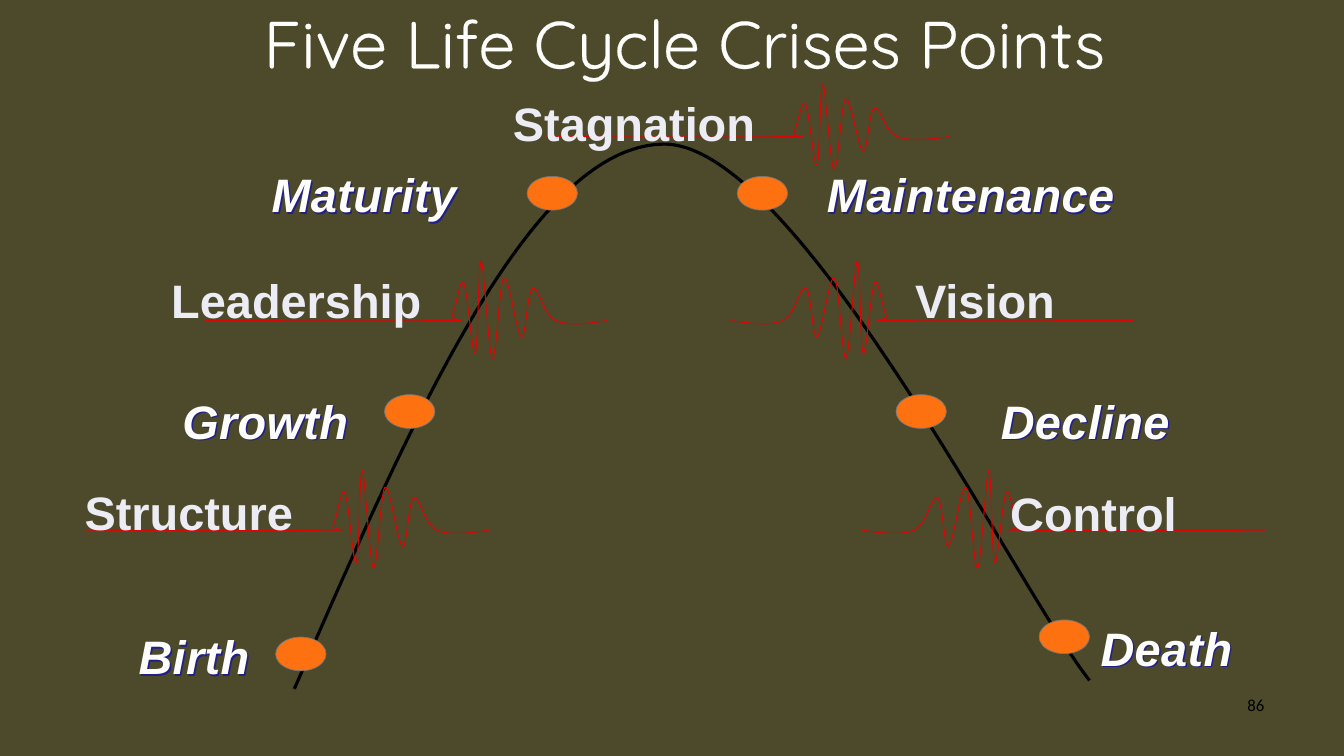
"""Build the slide of the five crisis points along an organisation's life cycle."""
from lxml import etree
from pptx import Presentation
from pptx import util as u
from pptx.dml.color import RGBColor
from pptx.enum import shapes, text
from pptx.oxml import ns

PX = u.Inches(1) // 100
OLIVE = RGBColor(0x4D, 0x49, 0x2B)
WHITE = RGBColor(0xFF, 0xFF, 0xFF)
CREAM = RGBColor(0xF7, 0xF4, 0xE4)
BLACK = RGBColor(0, 0, 0)
STAGE_WHITE = RGBColor(0xFE, 0xFE, 0xFE)
STAGE_EDGE = RGBColor(0x20, 0x20, 0x86)
CRISIS_GREY = RGBColor(0xEC, 0xEC, 0xF4)
CRISIS_EDGE = RGBColor(0x02, 0x02, 0x85)
ORANGE = RGBColor(0xFD, 0x71, 0x11)
DOT_EDGE = RGBColor(0x77, 0x77, 0x77)
RED = RGBColor(0xDB, 0x05, 0x05)

TITLE = {"size": u.Pt(95), "name": "Quicksand"}
NUMBER = {"size": u.Pt(24), "name": "Calibri"}
CRISIS = {"size": u.Pt(67), "name": "Arial", "bold": True}
STAGE = {**CRISIS, "italic": True}
WIDE_INSETS = {"margin_left": 24 * PX, "margin_right": 24 * PX,
               "margin_top": 12 * PX, "margin_bottom": 12 * PX}
GROWING = {"word_wrap": False, "auto_size": text.MSO_AUTO_SIZE.SHAPE_TO_FIT_TEXT}


def write(box, words, font, color, frame, edge=None, edge_width=0):
    """Fill a box with one formatted run and return the run's properties."""
    for key, value in frame.items():
        setattr(box.text_frame, key, value)
    run = box.text_frame.paragraphs[0].add_run()
    run.text = words
    for key, value in font.items():
        setattr(run.font, key, value)
    run.font.color.rgb = color
    props = run.font._element
    if edge is not None:
        outline = etree.Element(ns.qn("a:ln"), w=str(u.Pt(edge_width)))
        solid = etree.SubElement(outline, ns.qn("a:solidFill"))
        etree.SubElement(solid, ns.qn("a:srgbClr"), val=str(edge))
        props.insert(0, outline)
    return props


def draw_curve(parent, points, color, width):
    """Draw chained cubic curves: a start point, then three points a piece."""
    start, *rest = [(x * PX, y * PX) for x, y in points]
    builder = parent.build_freeform(*start)
    builder.add_line_segments(rest, close=False)
    curve = builder.convert_to_shape()
    segments = list(curve._element.iter(ns.qn("a:lnTo")))
    for first in range(0, len(segments), 3):
        cubic = etree.Element(ns.qn("a:cubicBezTo"))
        segments[first].addprevious(cubic)
        for segment in segments[first:first + 3]:
            cubic.append(segment[0])
            segment.getparent().remove(segment)
    curve.shadow.inherit = False
    curve.fill.background()
    curve.line.color.rgb = color
    curve.line.width = u.Pt(width)


deck = Presentation()
deck.slide_width, deck.slide_height = 2667 * PX, 1500 * PX
slide = deck.slides.add_slide(deck.slide_layouts[5])
slide.background.fill.solid()
slide.background.fill.fore_color.rgb = OLIVE

number = slide.shapes.add_textbox(1911 * PX, 1367 * PX, 622 * PX, 104 * PX)
write(number, "86", NUMBER, BLACK, {**WIDE_INSETS, "word_wrap": True})
number.text_frame.paragraphs[0].alignment = text.PP_ALIGN.RIGHT

title = slide.shapes.title
title.left, title.top, title.width, title.height = 225 * PX, -42 * PX, 2267 * PX, 250 * PX
write(title, "Five Life Cycle Crises Points", TITLE, WHITE,
      {**WIDE_INSETS, "word_wrap": True, "auto_size": text.MSO_AUTO_SIZE.NONE,
       "vertical_anchor": text.MSO_ANCHOR.MIDDLE}, CREAM, 2.48)
title.text_frame.paragraphs[0].alignment = text.PP_ALIGN.CENTER

LIFE_CYCLE = [(584, 1367), (819, 828), (1054, 289), (1317, 286),
              (1580, 283), (2021, 1173), (2162, 1350)]
draw_curve(slide.shapes, LIFE_CYCLE, BLACK, 4.5)

STAGES = [
    ("Birth", 251, 1234, 293), ("Growth", 338, 767, 400), ("Maturity", 515, 317, 441),
    ("Maintenance", 1617, 317, 647), ("Decline", 1962, 767, 409), ("Death", 2160, 1217, 335),
]
for name, left, top, width in STAGES:
    stage = slide.shapes.add_textbox(left * PX, top * PX, width * PX, 137 * PX)
    props = write(stage, name, STAGE, STAGE_WHITE, {**WIDE_INSETS, **GROWING}, STAGE_EDGE, 1)
    props.set("spc", "50")
    effects = etree.SubElement(stage._element.spPr, ns.qn("a:effectLst"))
    shade = etree.SubElement(effects, ns.qn("a:outerShdw"), dist="38100", dir="2700000")
    etree.SubElement(shade, ns.qn("a:srgbClr"), val=str(STAGE_EDGE))

DOTS = [(1046, 350), (763, 783), (547, 1264), (1463, 350), (1778, 783), (2062, 1230)]
for left, top in DOTS:
    dot = slide.shapes.add_shape(shapes.MSO_SHAPE.OVAL, left * PX, top * PX, 100 * PX, 67 * PX)
    dot.shadow.inherit = False
    dot.fill.solid()
    dot.fill.fore_color.rgb = ORANGE
    dot.line.color.rgb = DOT_EDGE
    dot.line.width = u.Pt(1)

PULSE_WIDTH, PULSE_HEIGHT = 800, 200
PULSE = [
    (0, 119), (39, 125), (78, 130), (103, 119), (128, 109), (137, 50), (149, 55),
    (160, 60), (162, 155), (171, 151), (181, 148), (196, 26), (206, 34),
    (215, 41), (221, 200), (229, 194), (236, 189), (246, 3), (251, 1),
    (257, 0), (257, 176), (263, 184), (269, 191), (278, 57), (286, 44),
    (293, 32), (301, 96), (309, 109), (316, 121), (250, 118), (331, 119),
    (413, 121), (722, 119), (800, 119),
]
CRISES = [
    ("Vision", (1806, 534, 322), (1450, 517, 200), False),
    ("Leadership", (330, 534, 546), (406, 517, 200), True),
    ("Structure", (158, 954, 462), (170, 933, 200), True),
    (" Control", (1969, 956, 400), (1711, 933, 200), False),
    ("Stagnation", (1008, 182, 524), (1084, 167, 175), True),
]
for name, (left, top, width), (pulse_left, pulse_top, pulse_height), mirrored in CRISES:
    crisis = slide.shapes.add_group_shape().shapes
    pulse = [(pulse_left + (PULSE_WIDTH - x if mirrored else x),
              pulse_top + y * pulse_height / PULSE_HEIGHT) for x, y in PULSE]
    draw_curve(crisis, pulse, RED, 1.5)
    label = crisis.add_textbox(left * PX, top * PX, width * PX, 123 * PX)
    write(label, name, CRISIS, CRISIS_GREY, GROWING, CRISIS_EDGE, 2.48)

deck.save("out.pptx")
